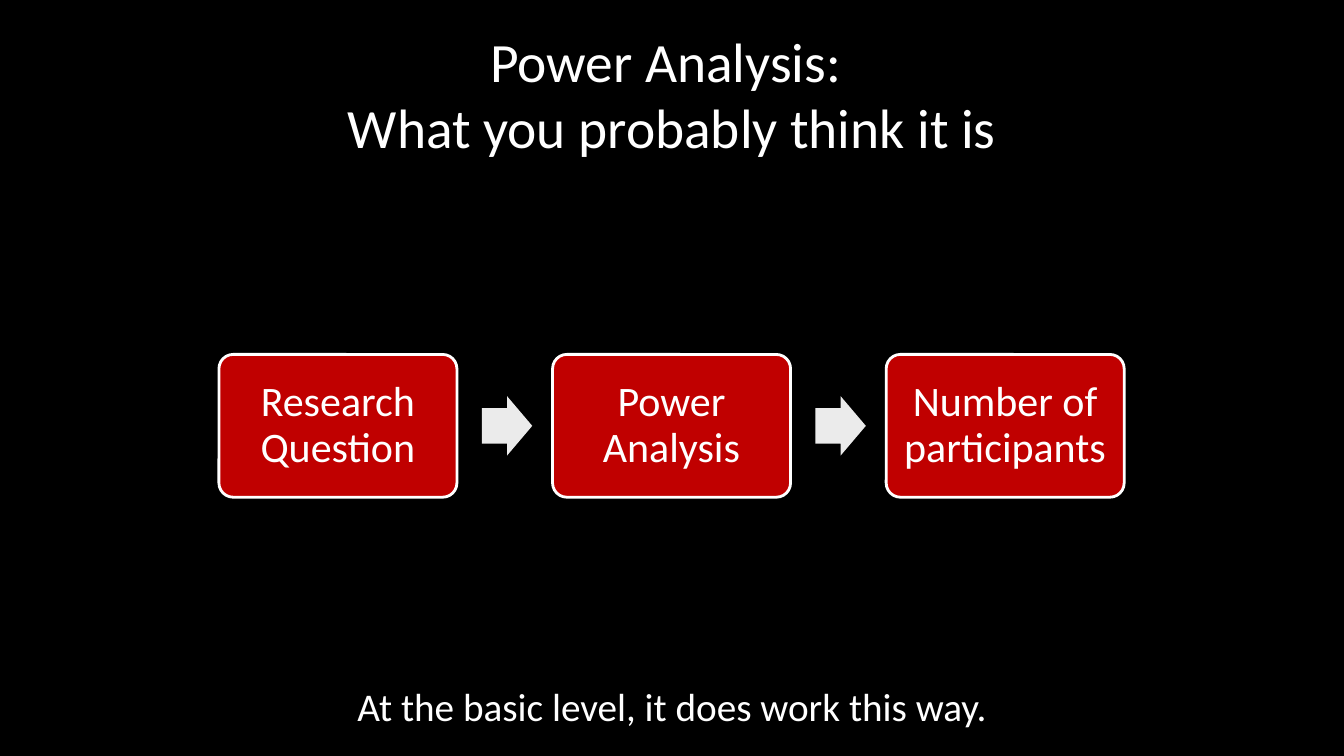
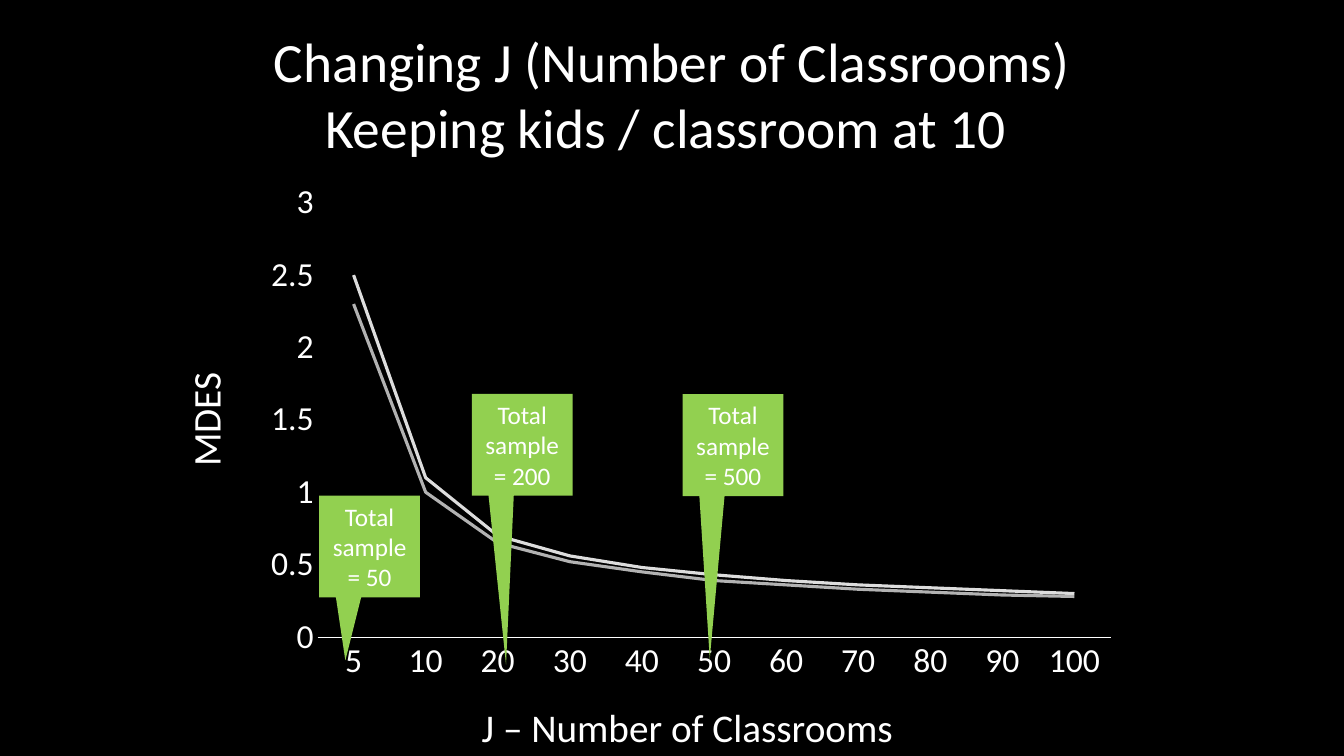
"""Build two slides on power analysis: a process and a line chart with callouts."""
from lxml import etree
from pptx import Presentation
from pptx.chart.data import CategoryChartData
from pptx.dml.color import RGBColor
from pptx.enum.chart import XL_CHART_TYPE, XL_TICK_MARK
from pptx.enum.shapes import MSO_SHAPE
from pptx.enum.text import MSO_ANCHOR, MSO_AUTO_SIZE, PP_ALIGN
from pptx.oxml.ns import qn
from pptx.util import Pt

BLACK, WHITE, RED, GREEN, PALE = "000000", "FFFFFF", "C00000", "92D050", "EBEBEB"
FONT = "Calibri"


def paint(fill, color):
    fill.solid()
    fill.fore_color.rgb = RGBColor.from_string(color)


def write(frame, text, size, align=PP_ALIGN.CENTER, anchor=MSO_ANCHOR.MIDDLE):
    frame.text = text
    frame.auto_size = MSO_AUTO_SIZE.NONE
    frame.vertical_anchor = anchor
    for paragraph in frame.paragraphs:
        paragraph.alignment = align
        for run in paragraph.runs:
            run.font.size = Pt(size)
            run.font.name = FONT
            paint(run.font.fill, WHITE)


deck = Presentation()
deck.slide_width, deck.slide_height = Pt(960), Pt(540)
paint(deck.slide_master.background.fill, BLACK)

slides = []
for heading in (
    "Power Analysis: \vWhat you probably think it is",
    "Changing J (Number of Classrooms)\vKeeping kids / classroom at 10 ",
):
    slide = deck.slides.add_slide(deck.slide_layouts[5])
    title = slide.shapes.title
    title.left, title.top, title.width, title.height = Pt(48), Pt(21.6), Pt(864), Pt(90)
    write(title.text_frame, heading, 39.6)
    slides.append(slide)
process, effect = slides

STEP_LEFT, STEP_PITCH, STEP_WIDTH = 156.4, 238.3, 170
steps = ["Research Question", "Power Analysis", "Number of participants"]
for index, step in enumerate(steps):
    left = STEP_LEFT + index * STEP_PITCH
    box = process.shapes.add_shape(
        MSO_SHAPE.ROUNDED_RECTANGLE, Pt(left), Pt(253.2), Pt(STEP_WIDTH), Pt(102))
    box.adjustments[0] = 0.1
    box.shadow.inherit = False
    paint(box.fill, RED)
    paint(box.line.fill, WHITE)
    box.line.width = Pt(2)
    frame = box.text_frame
    frame.margin_left = frame.margin_right = Pt(8.64)
    frame.margin_top = frame.margin_bottom = Pt(8.64)
    write(frame, step, 30)
    frame.paragraphs[0].line_spacing = 0.9
    if index < len(steps) - 1:
        arrow = process.shapes.add_shape(
            MSO_SHAPE.RIGHT_ARROW, Pt(left + STEP_WIDTH + 17.8), Pt(283), Pt(36), Pt(42.4))
        arrow.adjustments[0], arrow.adjustments[1] = 0.6, 0.5
        arrow.shadow.inherit = False
        paint(arrow.fill, PALE)
        arrow.line.fill.background()

remark = process.shapes.add_textbox(Pt(138), Pt(468), Pt(684), Pt(72)).text_frame
remark.word_wrap = True
write(remark, "At the basic level, it does work this way.", 28)

data = CategoryChartData()
data.categories = ["5", *(str(count) for count in range(10, 101, 10))]
data.add_series("Series 1", [2.5, 1.1, 0.7, 0.56, 0.48, 0.43, 0.39, 0.36, 0.34, 0.32, 0.3])
data.add_series("Series 2", [2.3, 1, 0.65, 0.52, 0.45, 0.39, 0.36, 0.33, 0.31, 0.29, 0.28])
chart = effect.shapes.add_chart(
    XL_CHART_TYPE.LINE, Pt(167), Pt(126), Pt(636.5), Pt(384), data).chart
chart.has_legend = chart.has_title = False
chart.font.size, chart.font.name = Pt(20), FONT
paint(chart.font.fill, WHITE)
chart.plots[0].vary_by_categories = False
for curve, color in zip(chart.plots[0].series, ("DDDDDD", "B2B2B2")):
    curve.smooth = False
    paint(curve.format.line.fill, color)
    curve.format.line.width = Pt(2.25)

classrooms, mdes = chart.category_axis, chart.value_axis
for axis in (classrooms, mdes):
    axis.has_major_gridlines = False
    axis.major_tick_mark = axis.minor_tick_mark = XL_TICK_MARK.NONE
    axis.tick_labels.font.size = Pt(24)
    axis.tick_labels.font.name = FONT
    paint(axis.tick_labels.font.fill, WHITE)
paint(classrooms.format.line.fill, WHITE)
classrooms.format.line.width = Pt(0.75)
mdes.format.line.fill.background()
mdes.minimum_scale, mdes.maximum_scale, mdes.major_unit = 0, 3, 0.5
mdes.tick_labels.number_format = "General"
mdes.tick_labels.number_format_is_linked = False

plot_area = chart.plots[0]._element.getparent()
for old_layout in plot_area.findall(qn("c:layout")):
    plot_area.remove(old_layout)
layout = etree.Element(qn("c:layout"))
plot_area.insert(0, layout)
manual = etree.SubElement(layout, qn("c:manualLayout"))
for tag, value in (
    ("layoutTarget", "inner"), ("xMode", "edge"), ("yMode", "edge"),
    ("x", "0.094"), ("y", "0.049"), ("w", "0.89"), ("h", "0.808"),
):
    etree.SubElement(manual, qn(f"c:{tag}")).set("val", value)

for caption, left, top, width, rotation in (
    ("MDES", 105.2, 278.6, 82.8, 270),
    ("J – Number of Classrooms", 337, 499, 311.8, 0),
):
    label = effect.shapes.add_textbox(Pt(left), Pt(top), Pt(width), Pt(41))
    label.rotation = rotation
    label.text_frame.word_wrap = False
    write(label.text_frame, caption, 28, PP_ALIGN.LEFT, MSO_ANCHOR.TOP)

for total, left, top, tip_x, tip_y in (
    (50, 228, 354, -0.24, 1.12),
    (200, 337, 281.4, -0.16, 2.16),
    (500, 487.6, 281.6, -0.23, 2.1),
):
    callout = effect.shapes.add_shape(
        MSO_SHAPE.RECTANGULAR_CALLOUT, Pt(left), Pt(top), Pt(72), Pt(72.7))
    callout.adjustments[0], callout.adjustments[1] = tip_x, tip_y
    callout.shadow.inherit = False
    paint(callout.fill, GREEN)
    callout.line.fill.background()
    write(callout.text_frame, f"Total sample = {total}", 18)

deck.save("out.pptx")
